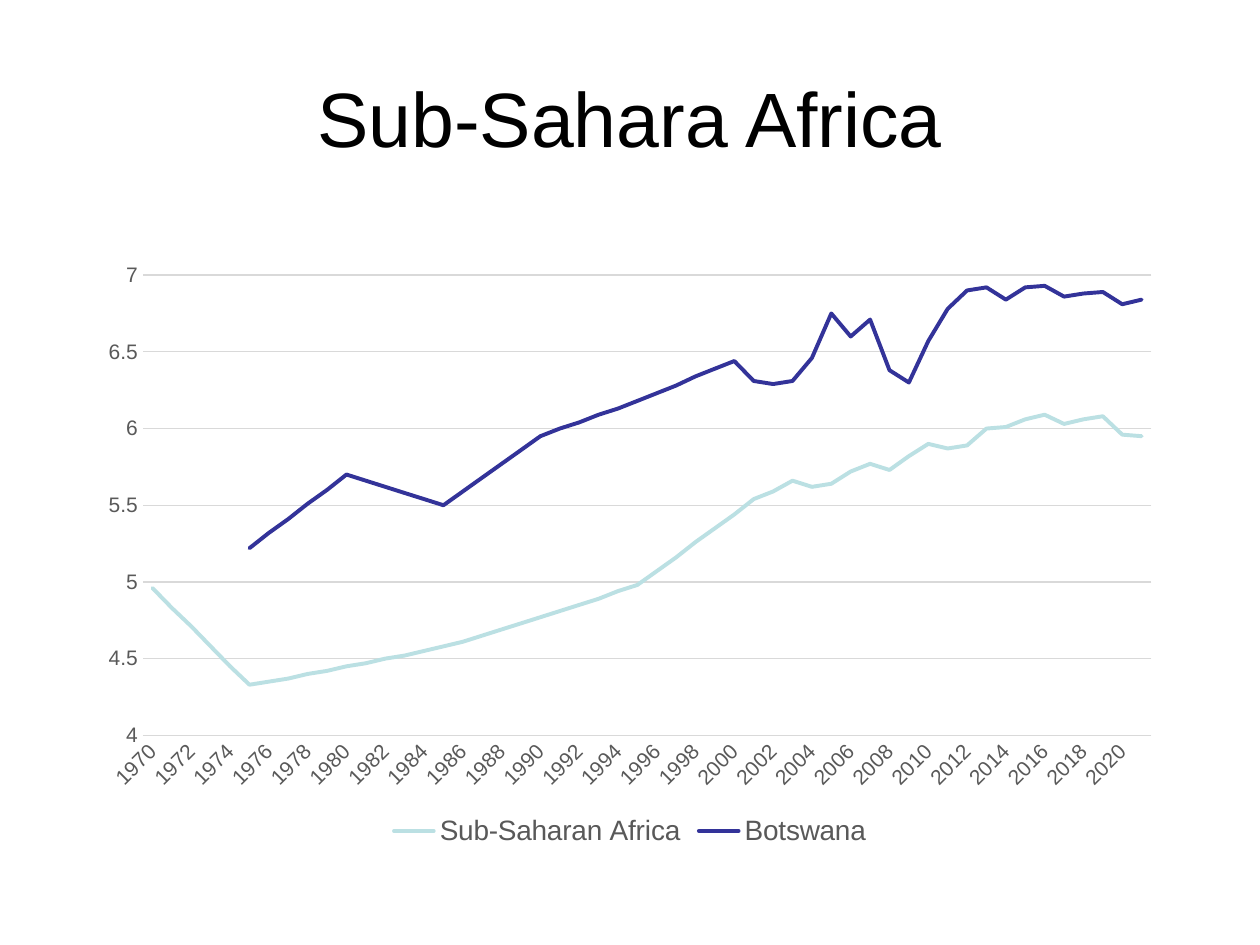
from dataclasses import dataclass

import pptx
import pptx.chart.data
import pptx.dml.color
import pptx.enum.chart
import pptx.enum.text
import pptx.oxml
import pptx.util

Pt = pptx.util.Pt
RGB = pptx.dml.color.RGBColor.from_string


@dataclass(frozen=True)
class Theme:
    """Colours, type sizes and line widths of the slide."""
    font: str = "Arial"
    title: str = "000000"
    label: str = "595959"
    grid: str = "D9D9D9"
    region: str = "BBE0E3"
    country: str = "333399"
    title_size: int = 44
    axis_size: int = 12
    legend_size: int = 16
    grid_width: float = 0.75
    series_width: float = 2.25


THEME = Theme()
YEARS = [str(year) for year in range(1970, 2022)]
REGION = [
    4.96, 4.83, 4.71, 4.58, 4.45, 4.33, 4.35, 4.37, 4.4, 4.42,
    4.45, 4.47, 4.5, 4.52, 4.55, 4.58, 4.61, 4.65, 4.69, 4.73,
    4.77, 4.81, 4.85, 4.89, 4.94, 4.98, 5.07, 5.16, 5.26, 5.35,
    5.44, 5.54, 5.59, 5.66, 5.62, 5.64, 5.72, 5.77, 5.73, 5.82,
    5.9, 5.87, 5.89, 6, 6.01, 6.06, 6.09, 6.03, 6.06, 6.08,
    5.96, 5.95,
]
BOTSWANA = [None] * 5 + [
    5.22, 5.32, 5.41, 5.51, 5.6,
    5.7, 5.66, 5.62, 5.58, 5.54, 5.5, 5.59, 5.68, 5.77, 5.86,
    5.95, 6, 6.04, 6.09, 6.13, 6.18, 6.23, 6.28, 6.34, 6.39,
    6.44, 6.31, 6.29, 6.31, 6.46, 6.75, 6.6, 6.71, 6.38, 6.3,
    6.57, 6.78, 6.9, 6.92, 6.84, 6.92, 6.93, 6.86, 6.88, 6.89,
    6.81, 6.84,
]
SERIES = [
    ("Sub-Saharan Africa", REGION, THEME.region),
    ("Botswana", BOTSWANA, THEME.country),
]


def style_font(font, size, color):
    """Give a font the theme typeface, a size and a colour."""
    font.name = THEME.font
    font.size = Pt(size)
    font.color.rgb = RGB(color)


def style_line(line, color, width):
    """Give a line a solid colour and a width."""
    line.color.rgb = RGB(color)
    line.width = Pt(width)


def add_text(slide, box, text, *, size, color, align, anchor):
    """Place one formatted paragraph in the given box."""
    frame = slide.shapes.add_textbox(*map(Pt, box)).text_frame
    frame.word_wrap = True
    frame.vertical_anchor = anchor
    paragraph = frame.paragraphs[0]
    paragraph.alignment = align
    run = paragraph.add_run()
    run.text = text
    style_font(run.font, size, color)


def add_title(slide, box):
    """Place the centred slide title."""
    add_text(
        slide, box, "Sub-Sahara Africa",
        size=THEME.title_size, color=THEME.title,
        align=pptx.enum.text.PP_ALIGN.CENTER,
        anchor=pptx.enum.text.MSO_ANCHOR.MIDDLE,
    )


def style_year_axis(axis):
    """Show every second year at a slant."""
    axis.major_tick_mark = pptx.enum.chart.XL_TICK_MARK.NONE
    style_font(axis.tick_labels.font, THEME.axis_size, THEME.label)
    style_line(axis.format.line, THEME.grid, THEME.grid_width)
    element = axis._element
    element.txPr.bodyPr.set("rot", str(-45 * 60000))
    skip = pptx.oxml.parse_xml(
        '<c:tickLblSkip xmlns:c="http://schemas.openxmlformats.org/'
        'drawingml/2006/chart" val="2"/>'
    )
    element.find(pptx.oxml.ns.qn("c:noMultiLvlLbl")).addprevious(skip)


def style_value_axis(axis):
    """Scale the values from 4 to 7 with light gridlines."""
    axis.minimum_scale, axis.maximum_scale = 4, 7
    axis.major_unit = 0.5
    axis.major_tick_mark = pptx.enum.chart.XL_TICK_MARK.NONE
    style_font(axis.tick_labels.font, THEME.axis_size, THEME.label)
    axis.tick_labels.number_format = "General"
    axis.tick_labels.number_format_is_linked = False
    axis.format.line.fill.background()
    axis.has_major_gridlines = True
    style_line(axis.major_gridlines.format.line, THEME.grid, THEME.grid_width)


def add_trend_chart(slide, box):
    """Place the line chart of the region and Botswana."""
    data = pptx.chart.data.CategoryChartData()
    data.categories = YEARS
    for name, values, _ in SERIES:
        data.add_series(name, values)
    chart = slide.shapes.add_chart(
        pptx.enum.chart.XL_CHART_TYPE.LINE, *map(Pt, box), data
    ).chart
    style_font(chart.font, 10, THEME.title)
    chart.has_title = False
    chart.has_legend = True
    chart.legend.position = pptx.enum.chart.XL_LEGEND_POSITION.BOTTOM
    chart.legend.include_in_layout = False
    style_font(chart.legend.font, THEME.legend_size, THEME.label)
    style_year_axis(chart.category_axis)
    style_value_axis(chart.value_axis)
    plot = chart.plots[0]
    plot.vary_by_categories = False
    for series, (_, _, color) in zip(plot.series, SERIES):
        series.smooth = False
        series.marker.style = pptx.enum.chart.XL_MARKER_STYLE.NONE
        style_line(series.format.line, color, THEME.series_width)
        series.format.line._ln.set("cap", "rnd")


def main():
    """Build and save the slide."""
    deck = pptx.Presentation()
    deck.slide_width, deck.slide_height = Pt(720), Pt(540)
    slide = deck.slides.add_slide(deck.slide_layouts[6])
    add_title(slide, (36, 21.6, 648, 90))
    add_trend_chart(slide, (49.68, 144, 620.64, 342.72))
    deck.save("out.pptx")


if __name__ == "__main__":
    main()
